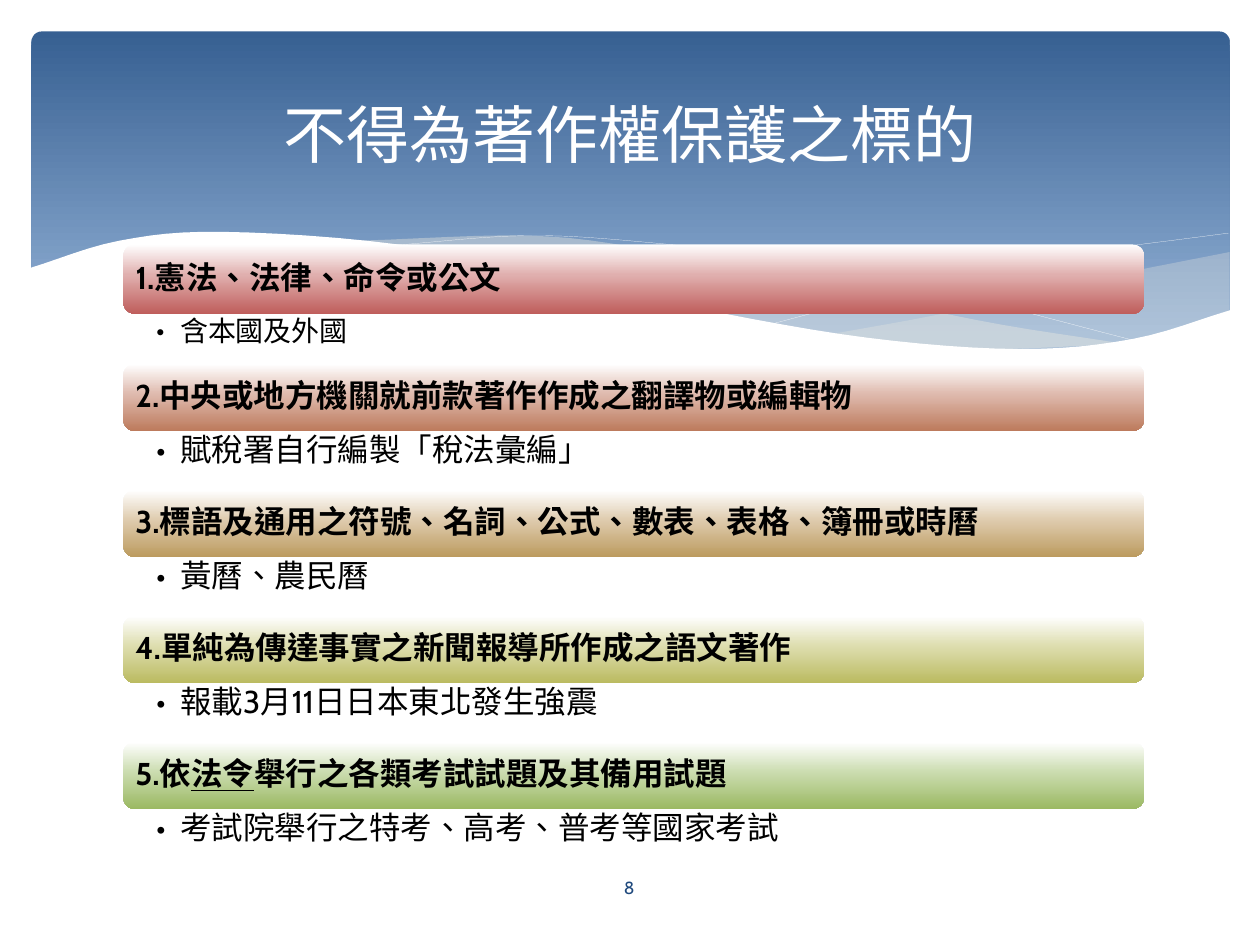
import collections
import lxml.etree
import pptx
import pptx.dml.color
import pptx.enum.shapes
import pptx.enum.text
import pptx.oxml.ns
import pptx.util

Inches = pptx.util.Inches
Pt = pptx.util.Pt
RGBColor = pptx.dml.color.RGBColor
Anchor = pptx.enum.text.MSO_ANCHOR
Align = pptx.enum.text.PP_ALIGN
qn = pptx.oxml.ns.qn

LATIN = "Cabin"
CHINESE = "Noto Sans CJK TC"
WHITE = RGBColor(0xFF, 0xFF, 0xFF)
BLACK = RGBColor(0x00, 0x00, 0x00)
NAVY = RGBColor(0x1F, 0x49, 0x7D)
CREAM = RGBColor(0xEE, 0xEC, 0xE1)
HEADER_DARK = RGBColor(0x37, 0x60, 0x92)
HEADER_LIGHT = RGBColor(0x95, 0xB3, 0xD7)
PINK, RED = RGBColor(0xE0, 0xAF, 0xAE), RGBColor(0xBF, 0x5E, 0x5C)
PEACH, RUST = RGBColor(0xDF, 0xBB, 0xAF), RGBColor(0xBD, 0x7B, 0x5D)
SAND, OCHRE = RGBColor(0xDF, 0xCC, 0xAF), RGBColor(0xBC, 0x9B, 0x5F)
STRAW, OLIVE = RGBColor(0xDE, 0xDE, 0xB0), RGBColor(0xBB, 0xBB, 0x61)
MINT, GREEN = RGBColor(0xCC, 0xDD, 0xB1), RGBColor(0x9B, 0xB9, 0x63)

LIST_LEFT, LIST_TOP, LIST_WIDTH = 0.98, 1.94, 8.1
BAR_HEIGHT, DETAIL_HEIGHT = 0.53, 0.47
BODY_SIZE = 18
FRAME_INSETS = (0.1, 0.05, 0.1, 0.05)
BAR_INSETS = (0.07, 0.07, 0.07, 0.07)
DETAIL_INSETS = (0.26, 0.03, 0.14, 0.03)
BULLET_INDENT = 0.19
CURVE_STEPS = 6

RIGHT_TOP = [(9.76, 2), (8.61, 2.23), (7.53, 2.48), (6.61, 2.65)]
RIGHT_BOTTOM = [(6.61, 2.65), (7.32, 2.74), (8.03, 2.78), (8.72, 2.74), (9.28, 2.63), (9.76, 2.47)]
MIDDLE_TOP = [(8.93, 2.73), (7.75, 2.54), (6.29, 2.22), (5.14, 1.98), (4.2, 1.87), (2.86, 1.91)]
MIDDLE_BOTTOM = [(2.86, 1.91), (3.62, 2.03), (4.49, 2.22), (5.66, 2.48), (6.8, 2.68),
                 (7.73, 2.77), (8.93, 2.73)]
LONG_CURVE = [(3.09, 1.95), (4.16, 1.87), (5.1, 1.92), (6.08, 2.04), (7.27, 2.26), (9.07, 2.72)]
SHORT_CURVE = [(6.13, 2.57), (7.2, 2.29), (8.36, 2.04), (9.75, 1.85)]
PAGE_EDGE = [(0.23, 2.13), (0.95, 1.91), (1.77, 1.84), (3.16, 1.94), (4.47, 2.2),
             (5.55, 2.45), (6.88, 2.68), (8.09, 2.77), (8.99, 2.69), (9.77, 2.46)]
PAGE_CORNERS = [(9.77, 3.29), (0.23, 3.29)]

Section = collections.namedtuple(
    "Section", "heading detail middle bottom detail_size bar_height detail_height",
    defaults=(BODY_SIZE, BAR_HEIGHT, DETAIL_HEIGHT))
SECTIONS = [
    Section(["1.憲法、法律、命令或公文"], "含本國及外國", PINK, RED,
            detail_size=16, bar_height=0.55, detail_height=0.4),
    Section(["2.中央或地方機關就前款著作作成之翻譯物或編輯物"],
            "賦稅署自行編製「稅法彙編」", PEACH, RUST),
    Section(["3.標語及通用之符號、名詞、公式、數表、表格、簿冊或時曆"],
            "黃曆、農民曆", SAND, OCHRE),
    Section(["4.單純為傳達事實之新聞報導所作成之語文著作"],
            "報載3月11日日本東北發生強震", STRAW, OLIVE),
    Section(["5.依", "法令", "舉行之各類考試試題及其備用試題"],
            "考試院舉行之特考、高考、普考等國家考試", MINT, GREEN),
]
UNDERLINED = {"法令"}


def smooth(knots):
    """Return points of a Catmull-Rom curve that passes through the knots."""
    def mirror(end, inner):
        return tuple(2 * a - b for a, b in zip(end, inner))

    def blend(a, b, c, d, t):
        return (2 * b + (c - a) * t + (2 * a - 5 * b + 4 * c - d) * t ** 2
                + (3 * b - a - 3 * c + d) * t ** 3) / 2

    padded = [mirror(knots[0], knots[1]), *knots, mirror(knots[-1], knots[-2])]
    points = []
    for window in zip(padded, padded[1:], padded[2:], padded[3:]):
        for step in range(CURVE_STEPS):
            points.append(tuple(blend(*axis, step / CURVE_STEPS) for axis in zip(*window)))
    return points + [knots[-1]]


def add_span(para, text, size, color, latin=LATIN, bold=False):
    """Add one formatted run to a paragraph."""
    span = para.add_run()
    span.text = text
    span.font.size = Pt(size)
    span.font.name = latin
    span.font.bold = bold
    span.font.underline = text in UNDERLINED
    span.font.color.rgb = color
    properties = span.font._element
    properties.set("lang", "zh-TW")
    properties.find(qn("a:latin")).addnext(lxml.etree.Element(qn("a:ea"), typeface=CHINESE))


def format_frame(frame, anchor, insets, alignment):
    """Format a text frame and return its first paragraph."""
    frame.word_wrap = True
    frame.vertical_anchor = anchor
    (frame.margin_left, frame.margin_top,
     frame.margin_right, frame.margin_bottom) = map(Inches, insets)
    para = frame.paragraphs[0]
    para.alignment = alignment
    return para


def add_gradient_bar(page, left, top, width, height, stops):
    """Add a rounded rectangle with a gradient from top to bottom."""
    bar = page.shapes.add_shape(
        pptx.enum.shapes.MSO_SHAPE.ROUNDED_RECTANGLE,
        *map(Inches, (left, top, width, height)))
    bar.shadow.inherit = False
    bar.line.fill.background()
    bar.fill.gradient()
    bar.fill.gradient_angle = 270
    stop_list = bar.element.spPr.find(qn("a:gradFill")).find(qn("a:gsLst"))
    for stop in list(stop_list):
        stop_list.remove(stop)
    for percent, color in stops:
        stop = lxml.etree.SubElement(stop_list, qn("a:gs"), pos=str(percent * 1000))
        lxml.etree.SubElement(stop, qn("a:srgbClr"), val=str(color))
    return bar


def add_outline(page, points, close):
    """Add a freeform through points given in inches."""
    start, *others = [(Inches(x), Inches(y)) for x, y in points]
    builder = page.shapes.build_freeform(*start)
    builder.add_line_segments(others, close=close)
    outline = builder.convert_to_shape()
    outline.shadow.inherit = False
    return outline


def add_wave(page, points, color, opacity):
    """Add a filled wave with the given opacity in percent."""
    wave = add_outline(page, points, True)
    wave.line.fill.background()
    wave.fill.solid()
    wave.fill.fore_color.rgb = color
    tint = wave.element.spPr.find(qn("a:solidFill")).find(qn("a:srgbClr"))
    lxml.etree.SubElement(tint, qn("a:alpha"), val=str(opacity * 1000))


def add_curve(page, knots):
    """Add a thin white curve."""
    curve = add_outline(page, smooth(knots), False)
    curve.fill.background()
    curve.line.color.rgb = WHITE
    curve.line.width = Pt(0.1)


def add_header(page):
    """Add the blue header with its waves."""
    header = add_gradient_bar(page, 0.25, 0.25, 9.51, 2.7, [(0, HEADER_DARK), (90, HEADER_LIGHT)])
    header.adjustments[0] = 0.03
    add_wave(page, smooth(RIGHT_TOP) + smooth(RIGHT_BOTTOM), CREAM, 29)
    add_wave(page, smooth(MIDDLE_TOP) + smooth(MIDDLE_BOTTOM), CREAM, 40)
    for knots in (LONG_CURVE, SHORT_CURVE):
        add_curve(page, knots)
    add_wave(page, smooth(PAGE_EDGE) + PAGE_CORNERS, WHITE, 100)


def add_heading(page, top, section):
    """Add a coloured bar with its bold heading."""
    stops = [(0, WHITE), (44, section.middle), (100, section.bottom)]
    bar = add_gradient_bar(page, LIST_LEFT, top, LIST_WIDTH, section.bar_height, stops)
    para = format_frame(bar.text_frame, Anchor.MIDDLE, BAR_INSETS, Align.LEFT)
    para.line_spacing = 0.9
    for text in section.heading:
        add_span(para, text, BODY_SIZE, BLACK, bold=True)


def add_text_box(page, left, top, width, height, anchor, insets, alignment):
    """Add a text box and return its first paragraph."""
    box = page.shapes.add_textbox(*map(Inches, (left, top, width, height)))
    return format_frame(box.text_frame, anchor, insets, alignment)


def add_detail(page, top, section):
    """Add the bulleted detail below a bar."""
    para = add_text_box(page, LIST_LEFT, top, LIST_WIDTH, section.detail_height,
                        Anchor.TOP, DETAIL_INSETS, Align.LEFT)
    para.level = 1
    para.line_spacing = 0.9
    add_span(para, section.detail, section.detail_size, BLACK)
    properties = para._p.get_or_add_pPr()
    properties.set("marL", str(Inches(BULLET_INDENT)))
    properties.set("indent", str(-Inches(BULLET_INDENT)))
    lxml.etree.SubElement(properties, qn("a:buFont"), typeface=LATIN)
    lxml.etree.SubElement(properties, qn("a:buChar"), char="•")


def add_title(page, text):
    """Place the title in front of the header."""
    title = page.shapes.title
    title.element.getparent().append(title.element)
    title.left, title.top, title.width, title.height = map(Inches, (0.5, 0.37, 9, 1.37))
    para = format_frame(title.text_frame, Anchor.MIDDLE, FRAME_INSETS, Align.CENTER)
    add_span(para, text, 36, WHITE, latin=CHINESE)


def main():
    """Build and save the deck."""
    deck = pptx.Presentation()
    deck.slide_width, deck.slide_height = Inches(10), Inches(7.5)
    page = deck.slides.add_slide(deck.slide_layouts[5])
    add_header(page)
    top = LIST_TOP
    for section in SECTIONS:
        add_heading(page, top, section)
        add_detail(page, top + section.bar_height, section)
        top += section.bar_height + section.detail_height
    add_title(page, "不得為著作權保護之標的")
    number = add_text_box(page, 4.36, 6.84, 1.27, 0.4, Anchor.MIDDLE, FRAME_INSETS, Align.CENTER)
    add_span(number, "8", 10, NAVY)
    deck.save("out.pptx")


if __name__ == "__main__":
    main()
